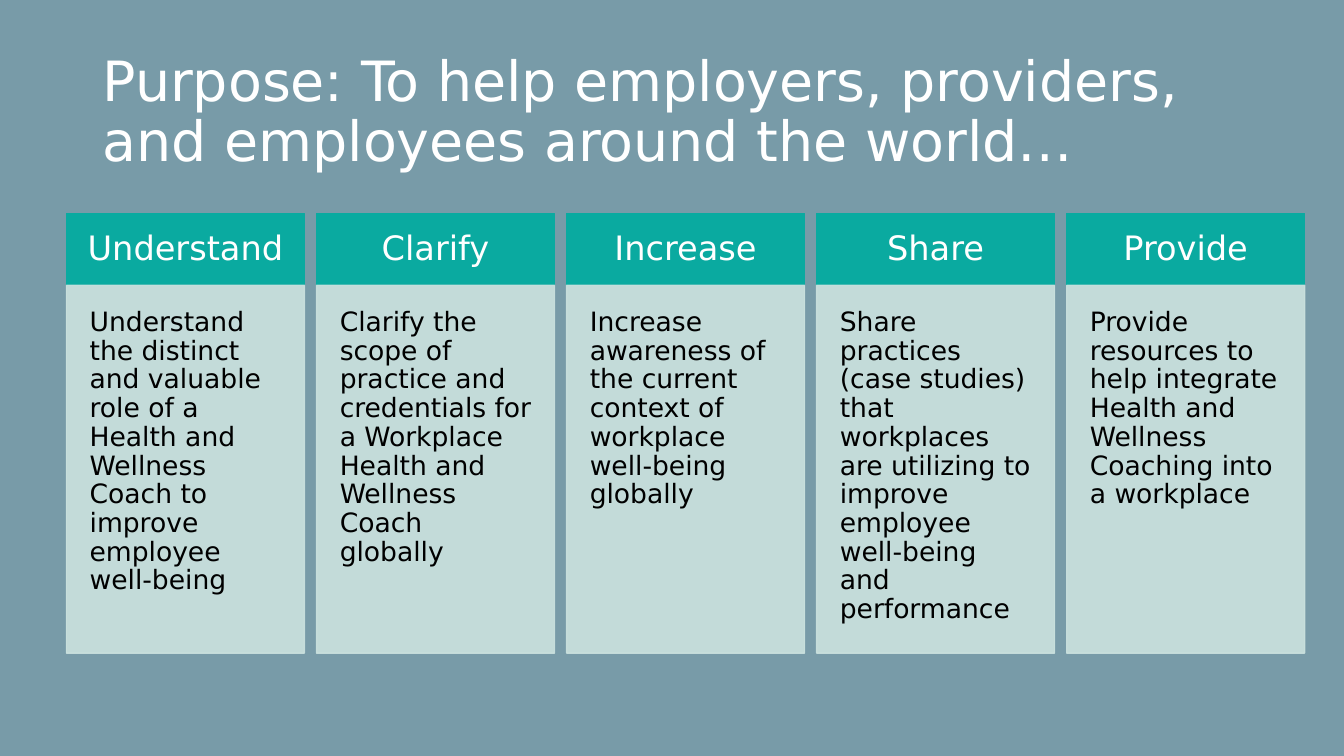
from pptx import Presentation
from pptx.dml.color import RGBColor
from pptx.enum.shapes import MSO_SHAPE as Shape
from pptx.enum.text import MSO_ANCHOR as Anchor, PP_ALIGN as Align
from pptx.oxml.ns import qn
from pptx.util import Inches, Pt
from lxml.etree import SubElement

COLORS = {
    "background": "789BA8",
    "header": "0AAAA0",
    "body": "CCE2DF",
    "light": "FFFFFF",
    "dark": "000000",
}
FONT = "DejaVu Sans"
LEFT, STEP, WIDTH = 0.66, 2.48, 2.36
HEADER_TOP, HEADER_HEIGHT, BODY_HEIGHT = 2.12, 0.71, 3.65
TITLE = "Purpose: To help employers, providers, and employees around the world…"
GOALS = [
    ("Understand", "Understand the distinct and valuable role of a Health and "
                   "Wellness Coach to improve employee well-being"),
    ("Clarify", "Clarify the scope of practice and credentials for a Workplace "
                "Health and Wellness Coach globally"),
    ("Increase", "Increase awareness of the current context of workplace "
                 "well-being globally"),
    ("Share", "Share practices (case studies) that workplaces are utilizing to "
              "improve employee well-being and performance"),
    ("Provide", "Provide resources to help integrate Health and Wellness "
                "Coaching into a workplace"),
]


def rgb(name):
    return RGBColor.from_string(COLORS[name])


def write_text(box, text, size, color, anchor, align=Align.LEFT, inset=None):
    frame = box.text_frame
    frame.word_wrap = True
    frame.vertical_anchor = anchor
    if inset is not None:
        frame.margin_left = frame.margin_right = Inches(inset)
        frame.margin_top = frame.margin_bottom = Inches(inset)
    para = frame.paragraphs[0]
    para.text = text
    para.alignment = align
    para.line_spacing = 0.9
    para.font.name = FONT
    para.font.size = Pt(size)
    para.font.color.rgb = rgb(color)


def add_title(page):
    box = page.shapes.add_textbox(Inches(0.92), Inches(0.4), Inches(11.5), Inches(1.45))
    write_text(box, TITLE, 39.6, "light", Anchor.MIDDLE)


def add_panel(page, left, top, height, color, opacity=100):
    panel = page.shapes.add_shape(
        Shape.RECTANGLE, Inches(left), Inches(top), Inches(WIDTH), Inches(height))
    panel.shadow.inherit = False
    panel.fill.solid()
    panel.fill.fore_color.rgb = rgb(color)
    panel.line.color.rgb = rgb(color)
    panel.line.width = Pt(1)
    if opacity < 100:
        for paint in panel.element.spPr.iter(qn("a:srgbClr")):
            SubElement(paint, qn("a:alpha")).set("val", str(opacity * 1000))
    return panel


def add_goal(page, left, heading, detail):
    header = add_panel(page, left, HEADER_TOP, HEADER_HEIGHT, "header")
    write_text(header, heading, 24, "light", Anchor.MIDDLE, Align.CENTER, 0.19)
    body = add_panel(page, left, HEADER_TOP + HEADER_HEIGHT, BODY_HEIGHT, "body", 90)
    write_text(body, detail, 19, "dark", Anchor.TOP, inset=0.23)


def main():
    deck = Presentation()
    deck.slide_width, deck.slide_height = Inches(13.33), Inches(7.5)
    page = deck.slides.add_slide(deck.slide_layouts[6])
    page.background.fill.solid()
    page.background.fill.fore_color.rgb = rgb("background")
    add_title(page)
    for index, (heading, detail) in enumerate(GOALS):
        add_goal(page, LEFT + index * STEP, heading, detail)
    deck.save("out.pptx")


if __name__ == "__main__":
    main()
